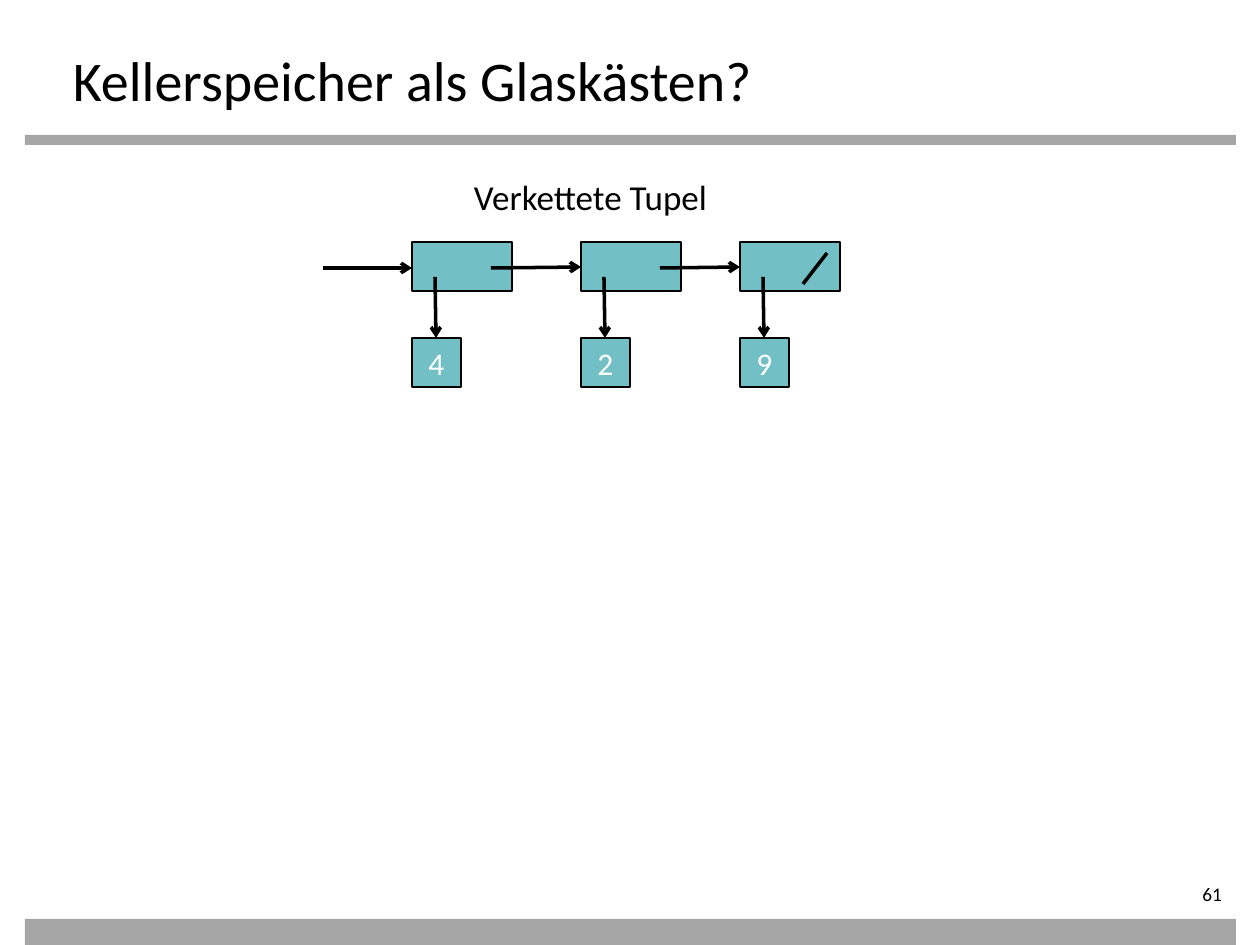
from dataclasses import dataclass
from itertools import pairwise

from lxml import etree
from pptx import Presentation
from pptx.dml.color import RGBColor
from pptx.enum.shapes import MSO_CONNECTOR, MSO_SHAPE
from pptx.enum.text import MSO_ANCHOR, PP_ALIGN
from pptx.oxml.ns import qn
from pptx.util import Emu, Pt

BLACK = RGBColor(0x00, 0x00, 0x00)
WHITE = RGBColor(0xFF, 0xFF, 0xFF)
GRAY = RGBColor(0xA6, 0xA6, 0xA6)
TEAL = RGBColor(0x72, 0xBF, 0xC5)
RECT = MSO_SHAPE.RECTANGLE
LINE = MSO_CONNECTOR.STRAIGHT
LEFT, CENTER, RIGHT = PP_ALIGN.LEFT, PP_ALIGN.CENTER, PP_ALIGN.RIGHT
TOP, MIDDLE = MSO_ANCHOR.TOP, MSO_ANCHOR.MIDDLE
FONT = "Calibri"


@dataclass(frozen=True)
class Box:
    left: int
    top: int
    width: int
    height: int


@dataclass(frozen=True)
class Label:
    text: str
    box: Box
    size: int
    align: PP_ALIGN = LEFT
    inset: tuple[int, int, int, int] = (13, 6, 13, 6)
    wrap: bool = True


@dataclass(frozen=True)
class Node:
    left: int
    value: str


CELL_TOP, CELL_WIDTH, SIDE = 242, 100, 49
VALUE_TOP = 338
LINK_Y = 268

BARS = [Box(25, 135, 1211, 10), Box(25, 919, 1211, 26)]
LABELS = [
    Label("Kellerspeicher als Glaskästen?", Box(64, 35, 1134, 69), 32,
          inset=(9, 10, 9, 0)),
    Label("61", Box(1096, 882, 139, 28), 11, RIGHT, (0, 0, 13, 0)),
    Label("Verkettete Tupel", Box(461, 169, 270, 55), 20, wrap=False),
]
NODES = [Node(412, "4"), Node(581, "2"), Node(740, "9")]


def px(count: int) -> Emu:
    return Emu(round(count * 914400 / 126))


def place(box: Box) -> list[Emu]:
    return [px(n) for n in (box.left, box.top, box.width, box.height)]


def write(shape, text: str, size: int, color: RGBColor, align: PP_ALIGN,
          inset: tuple[int, int, int, int], anchor: MSO_ANCHOR, wrap: bool) -> None:
    frame = shape.text_frame
    sides = ("margin_left", "margin_top", "margin_right", "margin_bottom")
    form = dict(zip(sides, map(px, inset)), vertical_anchor=anchor, word_wrap=wrap)
    for name, value in form.items():
        setattr(frame, name, value)
    para = frame.paragraphs[0]
    para.alignment = align
    run = para.add_run()
    run.text = text
    for name, value in {"name": FONT, "size": Pt(size)}.items():
        setattr(run.font, name, value)
    run.font.color.rgb = color


def add_label(slide, label: Label) -> None:
    shape = slide.shapes.add_textbox(*place(label.box))
    write(shape, label.text, label.size, BLACK, label.align, label.inset, TOP, label.wrap)


def add_rect(slide, box: Box, fill: RGBColor, edge: RGBColor | None = None):
    shape = slide.shapes.add_shape(RECT, *place(box))
    shape.shadow.inherit = False
    shape.fill.solid()
    shape.fill.fore_color.rgb = fill
    if edge is None:
        shape.line.fill.background()
    else:
        shape.line.color.rgb = edge
        shape.line.width = Pt(0.75)
    return shape


def add_line(slide, start: tuple[int, int], end: tuple[int, int],
             arrow: bool = True) -> None:
    line = slide.shapes.add_connector(LINE, *map(px, start + end))
    line.line.color.rgb = BLACK
    line.line.width = Pt(2)
    if arrow:
        etree.SubElement(line.line._get_or_add_ln(), qn("a:tailEnd"), type="arrow")
    etree.SubElement(line._element.spPr, qn("a:effectLst"))


def add_node(slide, node: Node) -> None:
    """Draw a list cell, its value and the arrow between them."""
    add_rect(slide, Box(node.left, CELL_TOP, CELL_WIDTH, SIDE), TEAL, BLACK)
    shape = add_rect(slide, Box(node.left, VALUE_TOP, SIDE, SIDE), TEAL, BLACK)
    write(shape, node.value, 18, WHITE, CENTER, (0, 0, 0, 0), MIDDLE, True)
    add_line(slide, (node.left + 23, 277), (node.left + 24, VALUE_TOP))


def main() -> None:
    deck = Presentation()
    deck.slide_width, deck.slide_height = px(1260), px(945)
    slide = deck.slides.add_slide(deck.slide_layouts[6])
    for bar in BARS:
        add_rect(slide, bar, GRAY)
    for label in LABELS:
        add_label(slide, label)
    for node in NODES:
        add_node(slide, node)

    first, last = NODES[0].left, NODES[-1].left
    add_line(slide, (first - 89, LINK_Y), (first, LINK_Y))
    for node, after in pairwise(NODES):
        add_line(slide, (node.left + 79, LINK_Y), (after.left, LINK_Y - 1))
    add_line(slide, (last + 87, 253), (last + 63, 284), arrow=False)
    deck.save("out.pptx")


if __name__ == "__main__":
    main()
